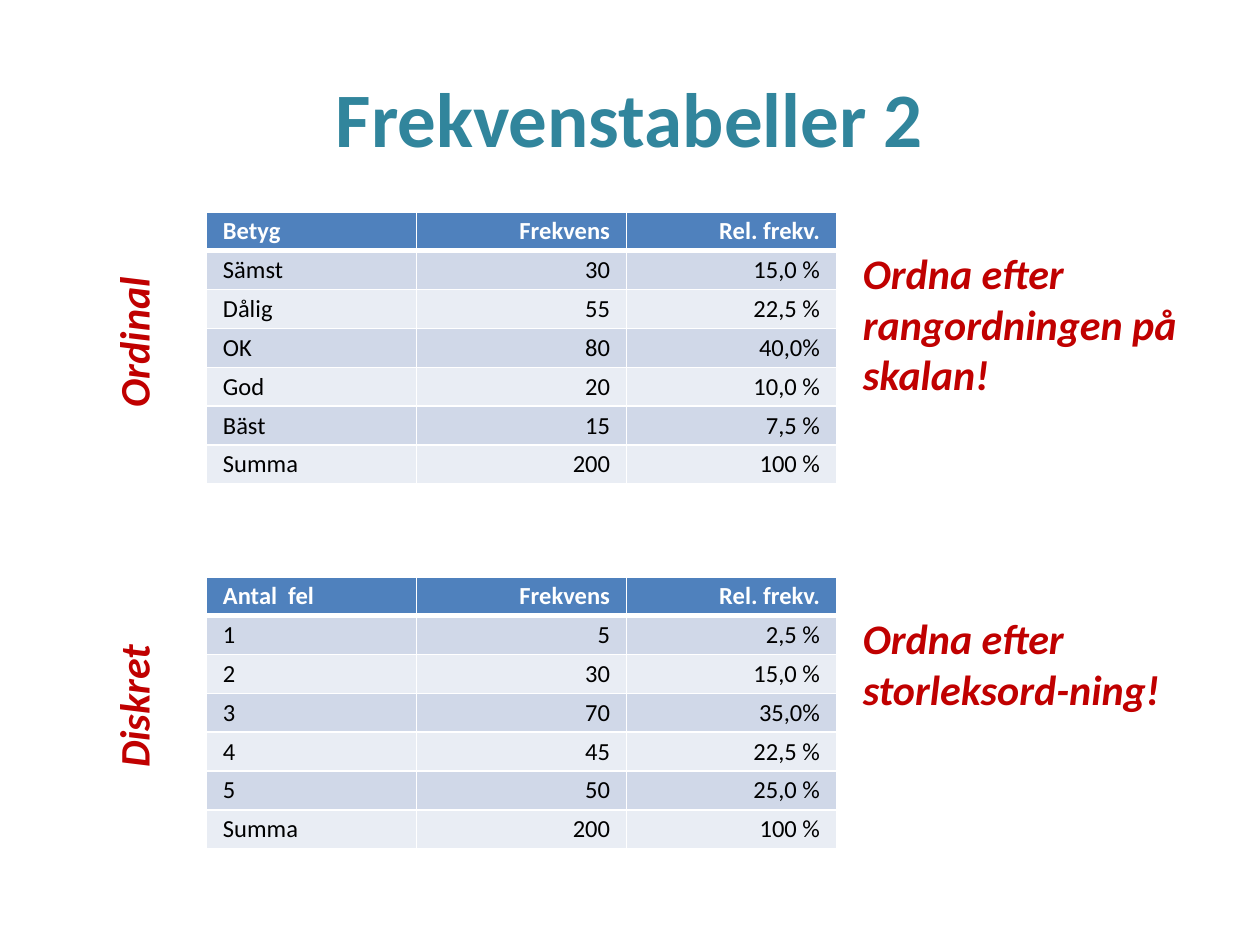
from lxml.etree import SubElement
from pptx import Presentation
from pptx.dml.color import RGBColor
from pptx.enum.text import MSO_ANCHOR, PP_ALIGN
from pptx.oxml.ns import qn
from pptx.util import Pt

TEAL = RGBColor(0x31, 0x85, 0x9C)
RED = RGBColor(0xC0, 0x00, 0x00)
BLUE = RGBColor(0x4F, 0x81, 0xBD)
DARK_BAND = RGBColor(0xD0, 0xD8, 0xE8)
LIGHT_BAND = RGBColor(0xE9, 0xED, 0xF4)
WHITE = RGBColor(0xFF, 0xFF, 0xFF)
BLACK = RGBColor(0x00, 0x00, 0x00)

TITLE_FONT = {"name": "Calibri", "size": Pt(44), "bold": True}
NOTE_FONT = {"name": "Calibri", "size": Pt(24), "bold": True, "italic": True}
HEADER_FONT = {"name": "Calibri", "size": Pt(14), "bold": True}
BODY_FONT = {**HEADER_FONT, "bold": False}
CELL_FORMAT = {
    "margin_left": Pt(9.4),
    "margin_right": Pt(9.4),
    "margin_top": Pt(2.6),
    "margin_bottom": Pt(2.6),
    "vertical_anchor": MSO_ANCHOR.MIDDLE,
}

TABLE_LEFT, COLUMN_WIDTH, ROW_HEIGHT = 118, 120, 22.2
SECTIONS = [
    {
        "top": 121,
        "scale": "Ordinal",
        "scale_top": 169.2,
        "advice": "Ordna efter rangordningen på skalan!",
        "rows": [
            ("Betyg", "Frekvens", "Rel. frekv."),
            ("Sämst", "30", "15,0 %"),
            ("Dålig", "55", "22,5 %"),
            ("OK", "80", "40,0%"),
            ("God", "20", "10,0 %"),
            ("Bäst", "15", "7,5 %"),
            ("Summa", "200", "100 %"),
        ],
    },
    {
        "top": 329.6,
        "scale": "Diskret",
        "scale_top": 377.3,
        "advice": "Ordna efter storleksord-ning!",
        "rows": [
            ("Antal  fel", "Frekvens", "Rel. frekv."),
            ("1", "5", "2,5 %"),
            ("2", "30", "15,0 %"),
            ("3", "70", "35,0%"),
            ("4", "45", "22,5 %"),
            ("5", "50", "25,0 %"),
            ("Summa", "200", "100 %"),
        ],
    },
]


def apply_format(target, values):
    """Set each named attribute of the target."""
    for name, value in values.items():
        setattr(target, name, value)


def write_text(frame, text, font, color, alignment):
    """Fill a text frame with one formatted paragraph."""
    para = frame.paragraphs[0]
    para.alignment = alignment
    span = para.add_run()
    span.text = text
    apply_format(span.font, font)
    span.font.color.rgb = color


def add_title(page, text):
    """Place and format the title placeholder."""
    title = page.shapes.title
    apply_format(title, {"left": Pt(36), "top": Pt(21.6), "width": Pt(648), "height": Pt(90)})
    title.text_frame.vertical_anchor = MSO_ANCHOR.MIDDLE
    write_text(title.text_frame, text, TITLE_FONT, TEAL, PP_ALIGN.CENTER)


def add_note(page, text, left, top, width, height, alignment=PP_ALIGN.LEFT, rotation=0):
    """Add a red text box, turned if asked."""
    box = page.shapes.add_textbox(Pt(left), Pt(top), Pt(width), Pt(height))
    box.rotation = rotation
    box.text_frame.word_wrap = True
    write_text(box.text_frame, text, NOTE_FONT, RED, alignment)


def set_borders(cell, bottom_width):
    """Draw white cell borders with the given bottom width."""
    properties = cell._tc.get_or_add_tcPr()
    for side, width in (("L", 1), ("R", 1), ("T", 1), ("B", bottom_width)):
        line = SubElement(properties, qn(f"a:ln{side}"), w=str(Pt(width)))
        fill = SubElement(line, qn("a:solidFill"))
        SubElement(fill, qn("a:srgbClr"), val=str(WHITE))


def format_cell(cell, text, row, column):
    """Write and style a cell according to its place in the table."""
    header = row == 0
    apply_format(cell, CELL_FORMAT)
    set_borders(cell, 3 if header else 1)
    cell.fill.solid()
    cell.fill.fore_color.rgb = BLUE if header else (LIGHT_BAND, DARK_BAND)[row % 2]
    write_text(
        cell.text_frame,
        text,
        HEADER_FONT if header else BODY_FONT,
        WHITE if header else BLACK,
        PP_ALIGN.RIGHT if column else PP_ALIGN.LEFT,
    )


def add_frequency_table(page, rows, top):
    """Add a banded frequency table."""
    columns = len(rows[0])
    table = page.shapes.add_table(
        len(rows), columns, Pt(TABLE_LEFT), Pt(top),
        Pt(COLUMN_WIDTH * columns), Pt(ROW_HEIGHT * len(rows)),
    ).table
    for column in table.columns:
        column.width = Pt(COLUMN_WIDTH)
    for row, values in enumerate(rows):
        table.rows[row].height = Pt(ROW_HEIGHT)
        for column, text in enumerate(values):
            format_cell(table.cell(row, column), text, row, column)


def add_section(page, section):
    """Add one table with its scale label and advice."""
    add_frequency_table(page, section["rows"], section["top"])
    add_note(page, section["scale"], 31, section["scale_top"], 106.6, 52.6, PP_ALIGN.CENTER, 270)
    add_note(page, section["advice"], 486, section["top"] + 17, 221.8, 72.7)


def main():
    """Build and save the deck."""
    deck = Presentation()
    apply_format(deck, {"slide_width": Pt(720), "slide_height": Pt(540)})
    page = deck.slides.add_slide(deck.slide_layouts.get_by_name("Title Only"))
    add_title(page, "Frekvenstabeller 2")
    for section in SECTIONS:
        add_section(page, section)
    deck.save("out.pptx")


if __name__ == "__main__":
    main()
